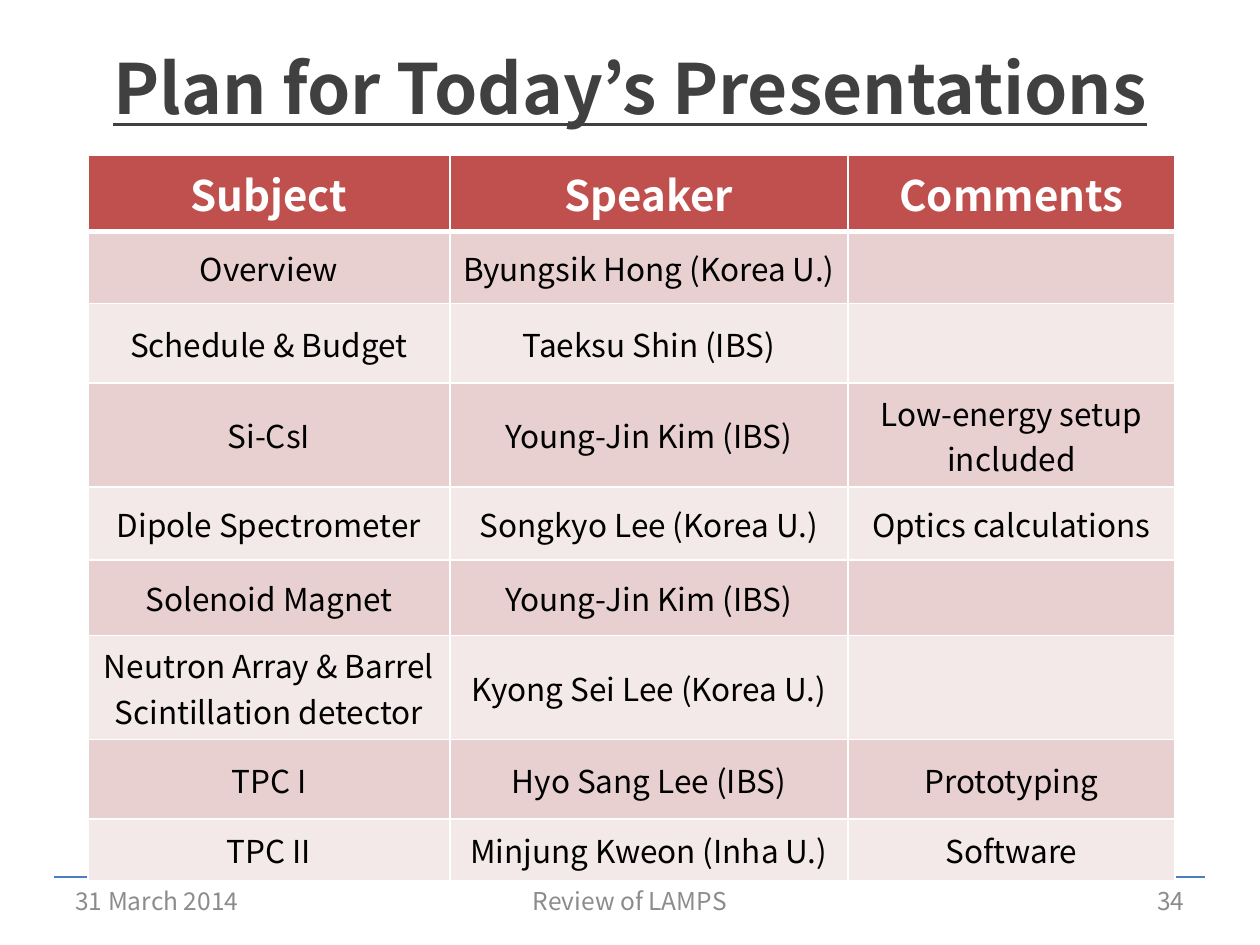
from lxml.etree import SubElement
from pptx import Presentation
from pptx.dml.color import RGBColor
from pptx.enum.shapes import MSO_CONNECTOR
from pptx.enum.text import MSO_ANCHOR as ANCHOR, MSO_AUTO_SIZE as AUTO, PP_ALIGN as ALIGN
from pptx.oxml.ns import qn
from pptx.util import Cm, Pt

FONT = "Noto Sans CJK KR"
TITLE = "Plan for Today’s Presentations"
ROWS = [
    ("Subject", "Speaker", "Comments"),
    ("Overview", "Byungsik Hong (Korea U.)", ""),
    ("Schedule & Budget", "Taeksu Shin (IBS)", ""),
    ("Si-CsI", "Young-Jin Kim (IBS)", "Low-energy setup included"),
    ("Dipole Spectrometer", "Songkyo Lee (Korea U.)", "Optics calculations"),
    ("Solenoid Magnet", "Young-Jin Kim (IBS)", ""),
    ("Neutron Array & Barrel Scintillation detector", "Kyong Sei Lee (Korea U.)", ""),
    ("TPC I", "Hyo Sang Lee (IBS)", "Prototyping"),
    ("TPC II", "Minjung Kweon (Inha U.)", "Software"),
]
COL_WIDTHS = [7.3, 8.02, 6.6]
ROW_HEIGHTS = [1.55, 1.45, 1.6, 2.1, 1.47, 1.52, 2.1, 1.6, 1.24]
HEADER_FILL = "C0504D"
BAND_FILLS = ["F4E9E9", "E8D0D0"]
FOOTERS = [  # text, left, width, alignment
    ("31 March 2014", 1.27, 5.92, ALIGN.LEFT),
    ("Review of LAMPS", 8.68, 8.04, ALIGN.CENTER),
    ("34", 18.21, 5.92, ALIGN.RIGHT),
]
TITLE_FORMAT = {"size": Pt(39.6), "bold": True, "underline": True}
HEADER_FORMAT = {"size": Pt(24), "bold": True}
BODY_FORMAT = {"size": Pt(18), "bold": False}
FOOTER_FORMAT = {"size": Pt(14)}


def rgb(color):
    return RGBColor.from_string(color)


def write(tf, text, color, fmt, align=ALIGN.CENTER):
    p = tf.paragraphs[0]
    p.alignment = align
    font = p.font
    if text:
        r = p.add_run()
        r.text = text
        font = r.font
    font.name = FONT
    font.color.rgb = rgb(color)
    for name, value in fmt.items():
        setattr(font, name, value)


def set_borders(cell, top, bottom):
    """Draw white borders, with the top and bottom widths in points."""
    tc_pr = cell._tc.get_or_add_tcPr()
    widths = {"a:lnL": 1, "a:lnR": 1, "a:lnT": top, "a:lnB": bottom}
    for i, (tag, width) in enumerate(widths.items()):
        ln = SubElement(tc_pr, qn(tag), w=str(Pt(width)))
        fill = SubElement(ln, qn("a:solidFill"))
        SubElement(fill, qn("a:srgbClr"), val="FFFFFF")
        tc_pr.insert(i, ln)


prs = Presentation()
prs.slide_width, prs.slide_height = Cm(25.4), Cm(19.05)
s = prs.slides.add_slide(prs.slide_layouts[5])

rule = s.shapes.add_connector(MSO_CONNECTOR.STRAIGHT, Cm(1.09), Cm(17.68), Cm(24.3), Cm(17.68))
rule.line.color.rgb = rgb("4B7EBC")
rule.line.width = Pt(0.75)
SubElement(rule._element.spPr, qn("a:effectLst"))

title = s.shapes.title
title.left, title.top, title.width, title.height = Cm(1.27), Cm(0.56), Cm(22.86), Cm(2.36)
title.text_frame.auto_size = AUTO.NONE
title.text_frame.vertical_anchor = ANCHOR.MIDDLE
write(title.text_frame, TITLE, "404040", TITLE_FORMAT)

for text, left, width, align in FOOTERS:
    tf = s.shapes.add_textbox(Cm(left), Cm(17.65), Cm(width), Cm(1.02)).text_frame
    tf.word_wrap = True
    tf.vertical_anchor = ANCHOR.MIDDLE
    write(tf, text, "8C8C8C", FOOTER_FORMAT, align)

table = s.shapes.add_table(len(ROWS), len(COL_WIDTHS), Cm(1.77), Cm(3.12),
                           Cm(sum(COL_WIDTHS)), Cm(sum(ROW_HEIGHTS))).table
for column, width in zip(table.columns, COL_WIDTHS):
    column.width = Cm(width)
for i, (row, height) in enumerate(zip(ROWS, ROW_HEIGHTS)):
    table.rows[i].height = Cm(height)
    header = i == 0
    for j, text in enumerate(row):
        cell = table.cell(i, j)
        cell.vertical_anchor = ANCHOR.MIDDLE
        cell.fill.solid()
        cell.fill.fore_color.rgb = rgb(HEADER_FILL if header else BAND_FILLS[i % 2])
        set_borders(cell, top=3 if i == 1 else 1, bottom=3 if header else 1)
        write(cell.text_frame, text, "FFFFFF" if header else "000000",
              HEADER_FORMAT if header else BODY_FORMAT)

prs.save("out.pptx")
